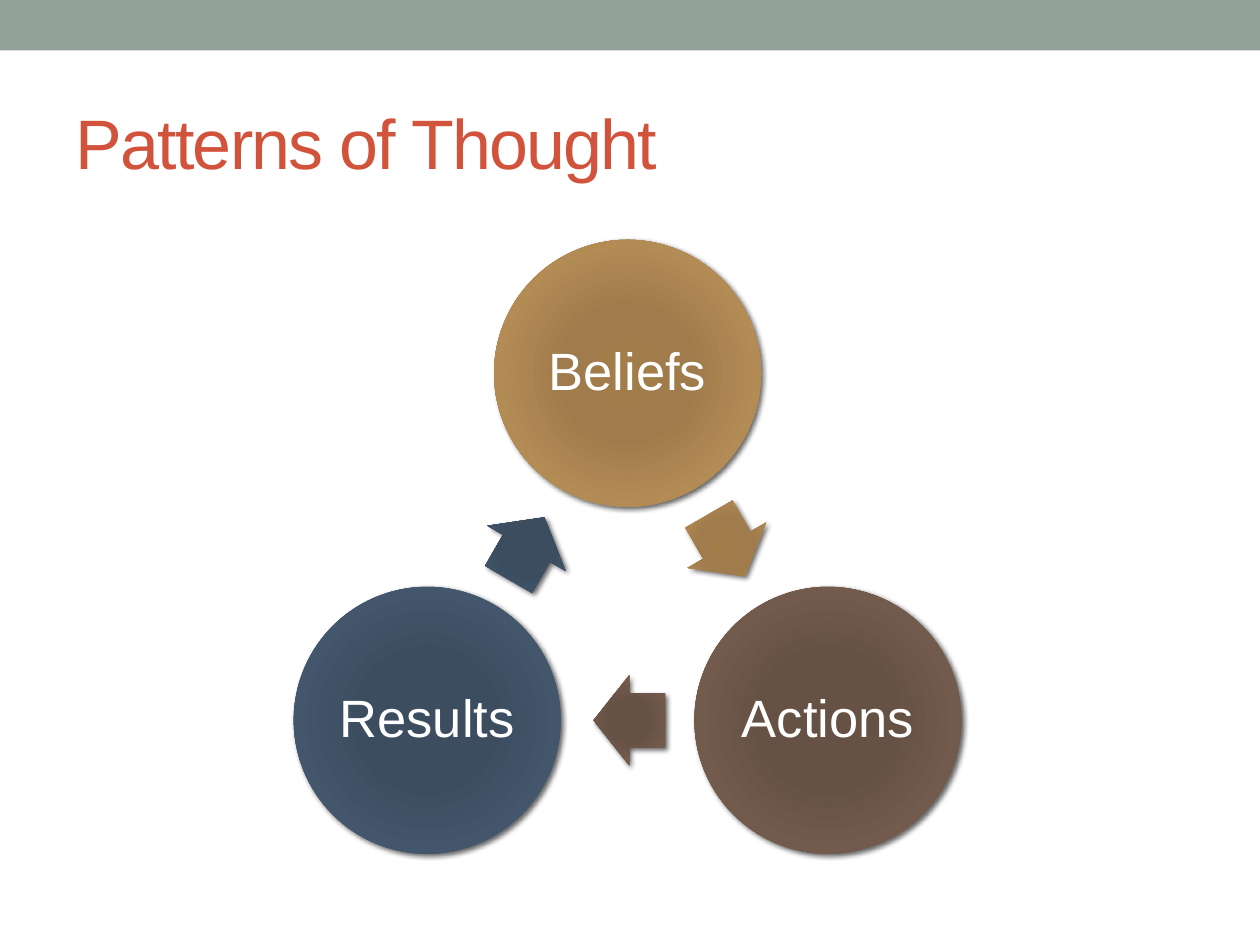
from math import cos, radians, sin

from pptx import Presentation
from pptx.dml.color import RGBColor
from pptx.enum.shapes import MSO_SHAPE as SHAPE
from pptx.enum.text import MSO_ANCHOR as ANCHOR, PP_ALIGN as ALIGN
from pptx.oxml import parse_xml
from pptx.oxml.ns import nsdecls, qn
from pptx.util import Pt

COLORS = {"band": "93A299", "title": "D2533C", "label": "FFFFFF", "shadow": "000000"}

# Gradient colours from the centre outwards, one set per stage
STOPS = (0, 34, 70, 100)
STAGES = [
    ("Beliefs", ("A37D49", "A07C4C", "B38B55", "AD8F67")),
    ("Actions", ("685044", "665145", "725A4D", "726056")),
    ("Results", ("3B4D61", "3C4D60", "43566B", "4C5A6A")),
]

# Cycle geometry in points
CENTER_X, CENTER_Y, RADIUS = 358.6, 345.5, 132.2
DIAMETER = 152.6
ARROW_W, ARROW_H = 41, 51.8
ARROW_SETBACK = 1


def add_run(p, text, size, color):
    r = p.add_run()
    r.text = text
    r.font.size = Pt(size)
    r.font.name = "Arial"
    r.font.color.rgb = RGBColor.from_string(COLORS[color])
    return r


def add_band(slide):
    sp = slide.shapes.add_shape(SHAPE.RECTANGLE, 0, 0, Pt(720), Pt(28.8))
    sp.shadow.inherit = False
    sp.fill.solid()
    sp.fill.fore_color.rgb = RGBColor.from_string(COLORS["band"])
    sp.line.fill.background()


def add_title(slide, text):
    title = slide.shapes.title
    title.left, title.top, title.width, title.height = Pt(36), Pt(41.8), Pt(648), Pt(77.8)
    tf = title.text_frame
    tf.vertical_anchor = ANCHOR.MIDDLE
    p = tf.paragraphs[0]
    p.alignment = ALIGN.LEFT
    r = add_run(p, text, 40, "title")
    r.font._element.set("spc", "-100")


def add_cycle_shape(slide, kind, x, y, w, h, colors):
    """Add a shape centred on x, y with a radial gradient and a soft shadow."""
    sp = slide.shapes.add_shape(kind, Pt(x - w / 2), Pt(y - h / 2), Pt(w), Pt(h))
    sp.line.fill.background()

    # Radial gradient
    sp.fill.background()
    stops = "".join(
        f'<a:gs pos="{pos * 1000}"><a:srgbClr val="{color}"/></a:gs>'
        for pos, color in zip(STOPS, colors)
    )
    gradient = parse_xml(
        f'<a:gradFill {nsdecls("a")} rotWithShape="1"><a:gsLst>{stops}</a:gsLst>'
        '<a:path path="circle"><a:fillToRect l="100000" t="100000" r="100000" b="100000"/>'
        "</a:path></a:gradFill>"
    )
    sp_pr = sp._element.spPr
    sp_pr.replace(sp_pr.find(qn("a:noFill")), gradient)

    # Shadow
    sp.shadow.inherit = False
    sp_pr.find(qn("a:effectLst")).append(parse_xml(
        f'<a:outerShdw {nsdecls("a")} blurRad="{Pt(3)}" dist="{Pt(2)}" dir="2700000" '
        f'rotWithShape="0"><a:srgbClr val="{COLORS["shadow"]}"><a:alpha val="60000"/>'
        "</a:srgbClr></a:outerShdw>"
    ))
    return sp


def add_stage(slide, text, x, y, colors):
    sp = add_cycle_shape(slide, SHAPE.OVAL, x, y, DIAMETER, DIAMETER, colors)
    tf = sp.text_frame
    tf.word_wrap = True
    tf.vertical_anchor = ANCHOR.MIDDLE
    tf.margin_left = tf.margin_right = tf.margin_top = tf.margin_bottom = Pt(3)
    p = tf.paragraphs[0]
    p.alignment = ALIGN.CENTER
    p.line_spacing = 0.9
    add_run(p, text, 30, "label")


def add_arrow(slide, start, end, angle, colors):
    x = (start[0] + end[0]) / 2 - ARROW_SETBACK * cos(radians(angle))
    y = (start[1] + end[1]) / 2 - ARROW_SETBACK * sin(radians(angle))
    sp = add_cycle_shape(slide, SHAPE.RIGHT_ARROW, x, y, ARROW_W, ARROW_H, colors)
    sp.adjustments[0], sp.adjustments[1] = 0.6, 0.5
    sp.rotation = angle


def add_cycle(slide):
    step = 360 / len(STAGES)
    angles = [radians(i * step - 90) for i in range(len(STAGES))]
    points = [(CENTER_X + RADIUS * cos(a), CENTER_Y + RADIUS * sin(a)) for a in angles]
    for i, (text, colors) in enumerate(STAGES):
        add_stage(slide, text, *points[i], colors)
        following = points[(i + 1) % len(points)]
        add_arrow(slide, points[i], following, step / 2 + i * step, colors)


def main():
    prs = Presentation()
    prs.slide_width, prs.slide_height = Pt(720), Pt(540)
    slide = prs.slides.add_slide(prs.slide_layouts[5])
    add_band(slide)
    add_title(slide, "Patterns of Thought")
    add_cycle(slide)
    prs.save("out.pptx")


if __name__ == "__main__":
    main()
